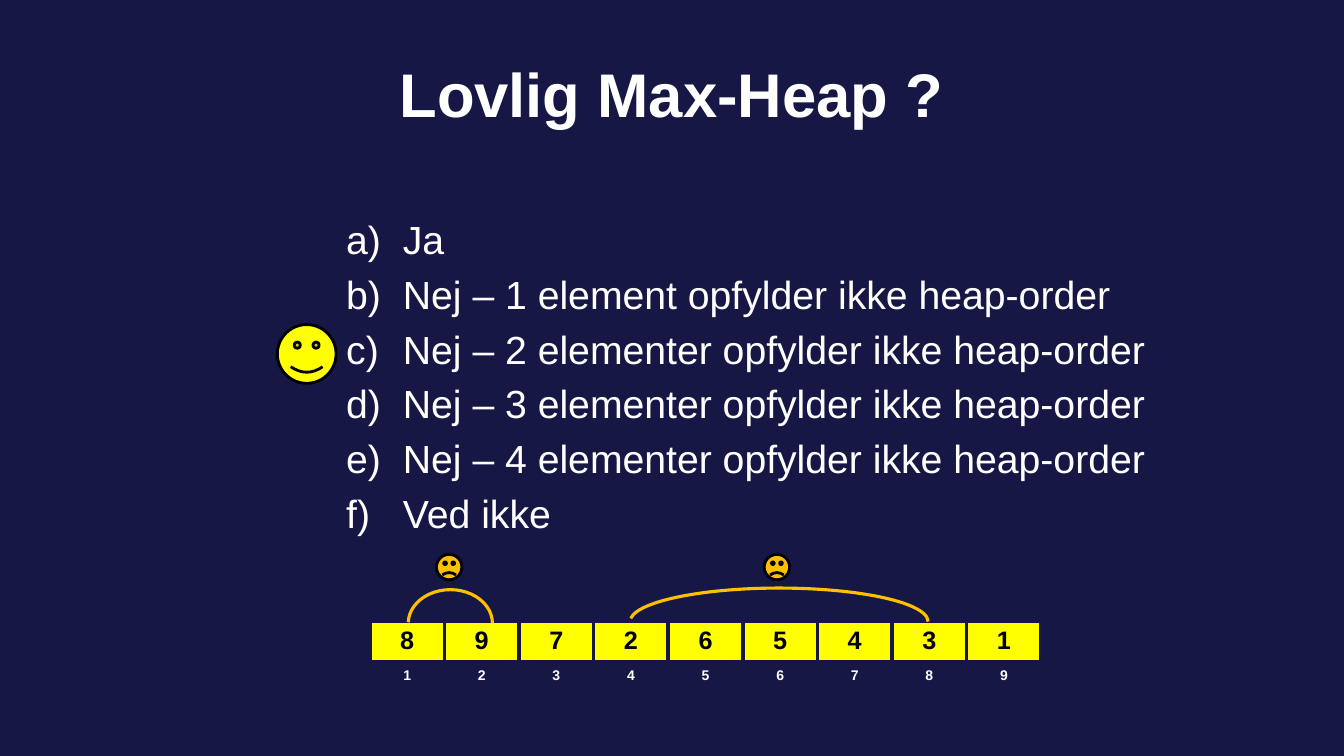
from lxml.etree import SubElement
from pptx import Presentation
from pptx.dml.color import RGBColor
from pptx.enum.shapes import MSO_SHAPE
from pptx.enum.text import MSO_ANCHOR, MSO_AUTO_SIZE, PP_ALIGN
from pptx.oxml import parse_xml
from pptx.oxml.ns import nsdecls, qn
from pptx.util import Cm, Pt

NAVY = RGBColor(0x17, 0x17, 0x45)
WHITE = RGBColor(0xFF, 0xFF, 0xFF)
BLACK = RGBColor(0x00, 0x00, 0x00)
YELLOW = RGBColor(0xFF, 0xFF, 0x00)
ORANGE = RGBColor(0xFF, 0xC0, 0x00)


def format_text(paragraph, text, size, color, bold=False):
    run = paragraph.add_run()
    run.text = text
    for name, value in {"name": "Arial", "size": Pt(size), "bold": bold}.items():
        setattr(run.font, name, value)
    run.font.color.rgb = color


def add_outlined(kind, place, adjustment, line_color, line_width, fill=None):
    shape = slide.shapes.add_shape(kind, *(Cm(length) for length in place))
    shape.shadow.inherit = False
    shape.adjustments[0] = adjustment
    shape.line.color.rgb = line_color
    shape.line.width = Pt(line_width)
    if fill is None:
        shape.fill.background()
    else:
        shape.fill.solid()
        shape.fill.fore_color.rgb = fill


presentation = Presentation()
presentation.slide_width = Cm(33.87)
presentation.slide_height = Cm(19.05)
slide = presentation.slides.add_slide(presentation.slide_layouts[1])
slide.background.fill.solid()
slide.background.fill.fore_color.rgb = NAVY

# Title and answer placeholders
title, answers = slide.shapes.title, slide.placeholders[1]
for placeholder, left, top, width, height, anchor in [
    (title, 4.23, 0.76, 25.4, 3.18, MSO_ANCHOR.MIDDLE),
    (answers, 8.47, 5.29, 21.38, 12.06, MSO_ANCHOR.TOP),
]:
    box = {"left": left, "top": top, "width": width, "height": height}
    for name, value in box.items():
        setattr(placeholder, name, Cm(value))
    frame = placeholder.text_frame
    frame.word_wrap = True
    frame.auto_size = MSO_AUTO_SIZE.NONE
    frame.vertical_anchor = anchor

heading = title.text_frame.paragraphs[0]
heading.alignment = PP_ALIGN.CENTER
format_text(heading, "Lovlig Max-Heap ?", 44, WHITE, bold=True)

# Lettered answers
options = [
    "Ja",
    "Nej – 1 element opfylder ikke heap-order",
    "Nej – 2 elementer opfylder ikke heap-order",
    "Nej – 3 elementer opfylder ikke heap-order",
    "Nej – 4 elementer opfylder ikke heap-order",
    "Ved ikke",
]
for index, option in enumerate(options):
    frame = answers.text_frame
    paragraph = frame.add_paragraph() if index else frame.paragraphs[0]
    format_text(paragraph, option, 28, WHITE)
    properties = paragraph._p.get_or_add_pPr()
    properties.set("marL", str(Cm(1.43)))
    properties.set("indent", str(-Cm(1.43)))
    spacing = SubElement(properties, qn("a:spcBef"))
    SubElement(spacing, qn("a:spcPct"), val="20000")
    SubElement(properties, qn("a:buFont"), typeface="+mj-lt")
    SubElement(properties, qn("a:buAutoNum"), type="alphaLcParenR")

# Heap array with its indices
heap = [8, 9, 7, 2, 6, 5, 4, 3, 1]
table = slide.shapes.add_table(
    2, len(heap), Cm(9.32), Cm(15.66), Cm(16.93), Cm(2.06)
).table
table.first_row = False
table.horz_banding = False
for column, value in enumerate(heap):
    table.columns[column].width = Cm(1.88)
    for row, (text, size, color) in enumerate(
        [(value, 18, BLACK), (column + 1, 10, WHITE)]
    ):
        cell = table.cell(row, column)
        paragraph = cell.text_frame.paragraphs[0]
        paragraph.alignment = PP_ALIGN.CENTER
        format_text(paragraph, str(text), size, color, bold=True)
        if row == 0:
            cell.fill.solid()
            cell.fill.fore_color.rgb = YELLOW
        else:
            cell.fill.background()
        for position, side in enumerate("LRTB"):
            border = parse_xml(
                f'<a:ln{side} {nsdecls("a")} w="{Pt(3)}"><a:solidFill>'
                f'<a:srgbClr val="{NAVY}"/></a:solidFill></a:ln{side}>'
            )
            cell._tc.get_or_add_tcPr().insert(position, border)

# Smiley at the right answer, frowns over the broken pairs
for place, smile, fill in [
    ((6.99, 8.18, 1.48, 1.48), 0.04653, YELLOW),
    ((11, 13.97, 0.64, 0.64), -0.04653, ORANGE),
    ((19.26, 13.97, 0.64, 0.64), -0.04653, ORANGE),
]:
    add_outlined(MSO_SHAPE.SMILEY_FACE, place, smile, BLACK, 2, fill)

# Arcs from parent to child
for place in [(10.29, 14.86, 2.12, 1.69), (15.88, 14.82, 7.51, 1.69)]:
    add_outlined(MSO_SHAPE.ARC, place, 108.747, ORANGE, 2.25)

presentation.save("out.pptx")
